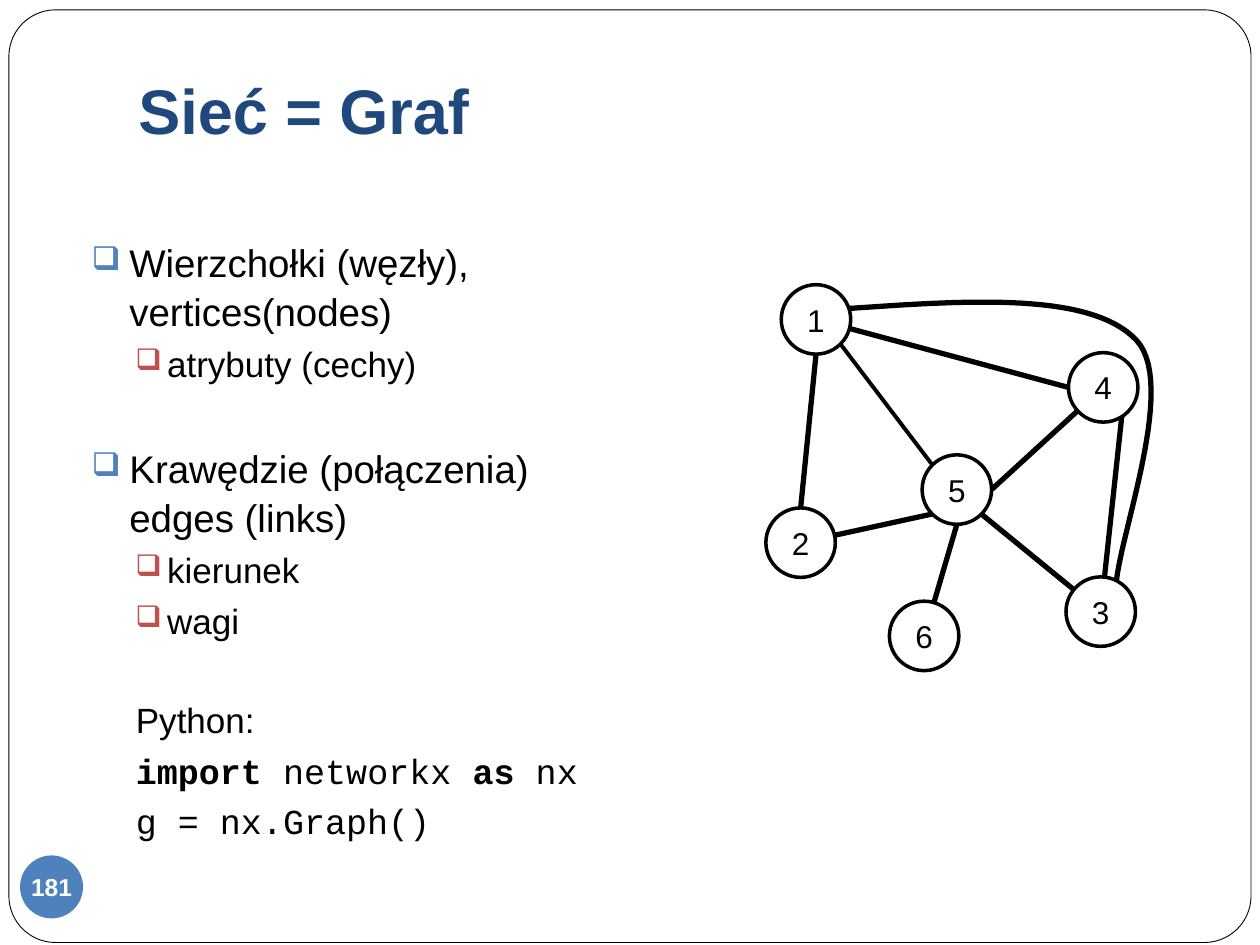
import dataclasses

import lxml.etree
import pptx
import pptx.dml.color
import pptx.enum.shapes
import pptx.enum.text
import pptx.oxml.ns
import pptx.util

Cm = pptx.util.Cm
Pt = pptx.util.Pt
qn = pptx.oxml.ns.qn
Shape = pptx.enum.shapes.MSO_SHAPE
Anchor = pptx.enum.text.MSO_ANCHOR
Align = pptx.enum.text.PP_ALIGN


@dataclasses.dataclass(frozen=True)
class Theme:
    white: str = "FFFFFF"
    black: str = "000000"
    title: str = "1F497D"
    badge: str = "4F81BD"
    sub_bullet: str = "C0504D"
    sans: str = "Arial"
    mono: str = "Courier New"
    title_size: float = 36
    topic_size: float = 22
    detail_size: float = 20
    node_size: float = 18
    badge_size: float = 14


THEME = Theme()
DIAMETER = 1.4
CENTRES = {
    "1": (16.45, 6.44),
    "2": (16.14, 10.94),
    "3": (22.19, 12.33),
    "4": (22.24, 7.81),
    "5": (19.29, 9.87),
    "6": (18.63, 12.82),
}
DIRECTIONS = {
    "C": (0, 0), "N": (0, -1), "S": (0, 1), "W": (-1, 0), "E": (1, 0),
    "NW": (-0.7, -0.7), "NE": (0.7, -0.7), "SW": (-0.7, 0.7), "SE": (0.7, 0.7),
}
EDGES = [
    ("1", "SE", "5", "NW", 2.25),
    ("1", "C", "4", "W", 3),
    ("4", "C", "5", "E", 3),
    ("5", "SW", "2", "C", 3),
    ("4", "NE", "3", "C", 3),
    ("3", "C", "5", "SE", 3),
    ("1", "S", "2", "N", 3),
    ("5", "S", "6", "C", 3),
]
CURVES = [
    [(17.12, 6.22), (19.56, 6.05), (22, 5.89), (22.91, 6.86)],
    [(22.91, 6.86), (23.8, 7.82), (22.38, 11.23), (22.5, 12.01)],
]
TOPIC_GAP, DETAIL_GAP, SECTION_GAP = 5.8, 3.7, 27.8


def rgb(value):
    return pptx.dml.color.RGBColor.from_string(value)


def set_font(font, size, color, name=THEME.sans, bold=False):
    font.name, font.size, font.bold = name, Pt(size), bold
    font.color.rgb = rgb(color)


def paint(shape, fill, line=None, width=0):
    shape.shadow.inherit = False
    shape.fill.solid()
    shape.fill.fore_color.rgb = rgb(fill)
    if line:
        shape.line.color.rgb = rgb(line)
        shape.line.width = Pt(width)
    else:
        shape.line.fill.background()


def add_frame(page):
    frame = page.shapes.add_shape(
        Shape.ROUNDED_RECTANGLE, Cm(0.18), Cm(0.2), Cm(25.04), Cm(18.8))
    frame.adjustments[0] = 0.05
    paint(frame, THEME.white, THEME.black, 0.5)


def add_disc(page, centre, diameter, label, size, fill, ink, line=None, bold=False):
    left, top = (value - diameter / 2 for value in centre)
    disc = page.shapes.add_shape(
        Shape.OVAL, Cm(left), Cm(top), Cm(diameter), Cm(diameter))
    paint(disc, fill, line, 2)
    box = disc.text_frame
    box.margin_left = box.margin_right = box.margin_top = box.margin_bottom = 0
    box.word_wrap = False
    box.vertical_anchor = Anchor.MIDDLE
    para = box.paragraphs[0]
    para.alignment = Align.CENTER
    set_font(para.font, size, ink, bold=bold)
    para.add_run().text = label


def node_point(node, direction):
    return [Cm(centre + step * DIAMETER / 2)
            for centre, step in zip(CENTRES[node], DIRECTIONS[direction])]


def add_edge(page, start, start_side, end, end_side, width):
    edge = page.shapes.add_connector(
        pptx.enum.shapes.MSO_CONNECTOR.STRAIGHT,
        *node_point(start, start_side), *node_point(end, end_side))
    edge.line.color.rgb = rgb(THEME.black)
    edge.line.width = Pt(width)
    lxml.etree.SubElement(edge._element.spPr, qn("a:effectLst"))


def bezier(points, t):
    weights = ((1 - t) ** 3, 3 * t * (1 - t) ** 2, 3 * t * t * (1 - t), t ** 3)
    return tuple(Cm(sum(weight * point[axis] for weight, point in zip(weights, points)))
                 for axis in (0, 1))


def add_curved_edge(page, steps=30):
    points = [bezier(curve, step / steps)
              for curve in CURVES for step in range(1, steps + 1)]
    builder = page.shapes.build_freeform(*bezier(CURVES[0], 0))
    builder.add_line_segments(points, close=False)
    paint(builder.convert_to_shape(), THEME.white, THEME.black, 3)


def add_text_box(page, left, top, width, height):
    box = page.shapes.add_textbox(Cm(left), Cm(top), Cm(width), Cm(height)).text_frame
    box.word_wrap = True
    return box


def add_title(page, text):
    box = add_text_box(page, 2.54, 0.76, 21.59, 2.46)
    box.margin_bottom = Cm(0.25)
    box.vertical_anchor = Anchor.BOTTOM
    para = box.paragraphs[0]
    set_font(para.font, THEME.title_size, THEME.title, bold=True)
    para.add_run().text = text


def add_para(box, gap, size, margin, indent=0, bullet=None, name=THEME.sans):
    first = box.paragraphs[0]
    para = box.add_paragraph() if first.runs else first
    para.space_before = Pt(gap)
    para.line_spacing = 1.05
    settings = para._p.get_or_add_pPr()
    settings.set("marL", str(Cm(margin)))
    settings.set("indent", str(Cm(indent)))
    if bullet:
        color = lxml.etree.SubElement(settings, qn("a:buClr"))
        lxml.etree.SubElement(color, qn("a:srgbClr"), val=bullet)
        lxml.etree.SubElement(settings, qn("a:buSzPct"), val="85000")
        lxml.etree.SubElement(settings, qn("a:buChar"), char="❑")
    set_font(para.font, size, THEME.black, name, bold=None)
    return para


def add_topic(box, lines, gap=TOPIC_GAP):
    para = add_para(box, gap, THEME.topic_size, 0.76, -0.76, THEME.badge)
    para.add_run().text = lines[0]
    for line in lines[1:]:
        para.add_line_break()
        para.add_run().text = line


def add_detail(box, text):
    para = add_para(box, DETAIL_GAP, THEME.detail_size, 1.52, -0.64, THEME.sub_bullet)
    para.level = 1
    para.add_run().text = text


def add_plain(box, spans, gap=DETAIL_GAP, name=THEME.sans):
    para = add_para(box, gap, THEME.detail_size, 0.89, name=name)
    para.level = 1
    for text, bold in spans:
        span = para.add_run()
        span.text = text
        span.font.bold = bold


def add_body(page):
    box = add_text_box(page, 1.6, 4.65, 12.4, 14.73)
    add_topic(box, ["Wierzchołki (węzły), ", "vertices(nodes)"])
    add_detail(box, "atrybuty (cechy)")
    add_topic(box, ["Krawędzie (połączenia) ", "edges (links)"], TOPIC_GAP + SECTION_GAP)
    add_detail(box, "kierunek")
    add_detail(box, "wagi")
    add_plain(box, [("Python:", False)], DETAIL_GAP + SECTION_GAP)
    add_plain(box, [("import ", True), ("networkx ", False), ("as ", True), ("nx", False)],
              name=THEME.mono)
    add_plain(box, [("g = nx.Graph()", False)], name=THEME.mono)


def main():
    deck = pptx.Presentation()
    deck.slide_width, deck.slide_height = Cm(25.4), Cm(19.05)
    page = deck.slides.add_slide(deck.slide_layouts[6])
    add_frame(page)
    add_curved_edge(page)
    add_title(page, "Sieć = Graf")
    add_disc(page, (1.04, 17.88), 1.27, "181", THEME.badge_size,
             THEME.badge, THEME.white, bold=True)
    for edge in EDGES:
        add_edge(page, *edge)
    for label, centre in CENTRES.items():
        add_disc(page, centre, DIAMETER, label, THEME.node_size,
                 THEME.white, THEME.black, THEME.black)
    add_body(page)
    deck.save("out.pptx")


if __name__ == "__main__":
    main()
